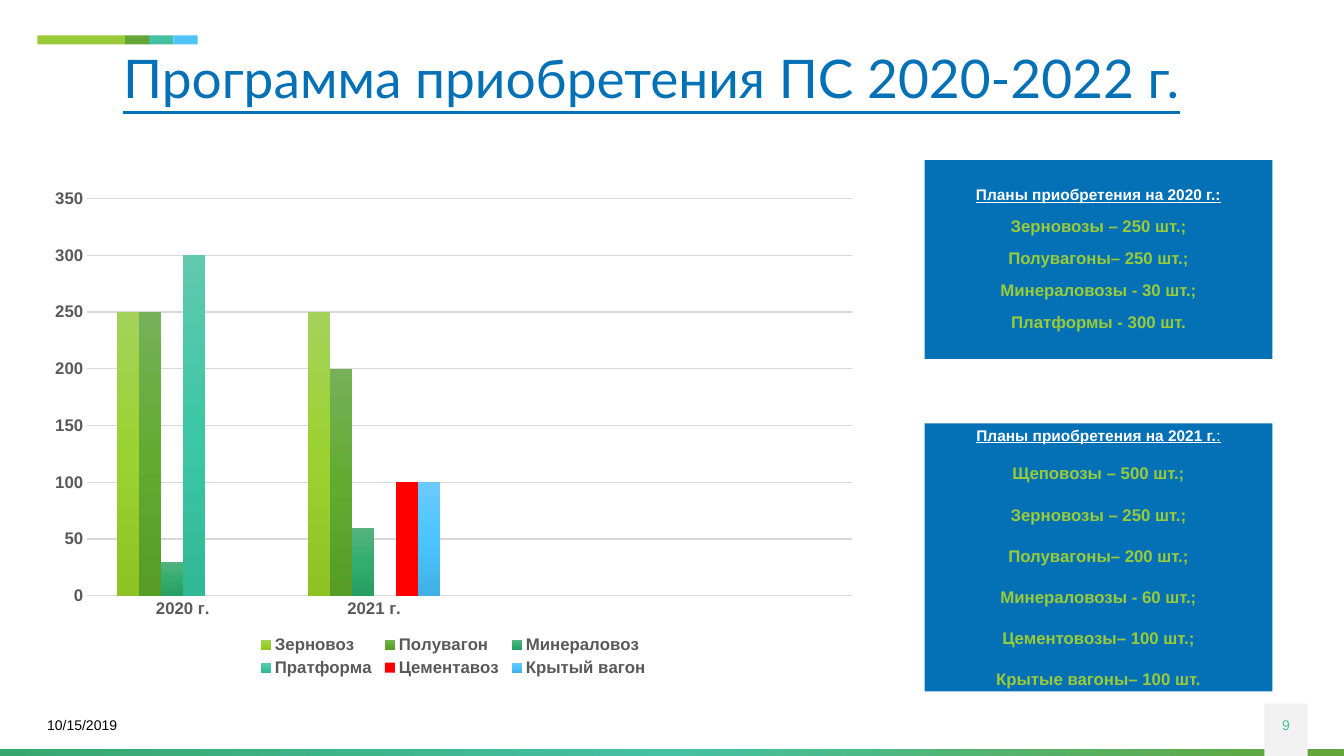
from lxml.etree import SubElement
from pptx import Presentation
from pptx.chart.data import CategoryChartData
from pptx.dml.color import RGBColor
from pptx.enum.chart import XL_CHART_TYPE as CHART, XL_LEGEND_POSITION as LEGEND, XL_TICK_MARK as TICK
from pptx.enum.shapes import MSO_SHAPE as SHAPE
from pptx.enum.text import MSO_ANCHOR as ANCHOR, PP_ALIGN as ALIGN
from pptx.oxml.ns import qn
from pptx.util import Inches, Pt

BLUE, LIME, GREEN, TEAL, SKY = "0471B7", "99CB38", "63A537", "44C1A3", "51C3F9"
GREY, RULE, WHITE = "595959", "D9D9D9", "FFFFFF"

WAGONS = [
    ("Зерновоз", (250, 250), ("A4D25A", "9BD231", "8DC323")),
    ("Полувагон", (250, 200), ("76B158", "62AB31", "569C27")),
    ("Минераловоз", (30, 60), ("58B380", "31AD6F", "279E63")),
    ("Пратформа", (300, None), ("61C8AD", "3EC7A6", "30B897")),
    ("Цементавоз", (None, 100), ("FF0000",)),
    ("Крытый вагон", (None, 100), ("6BCAFC", "4BC5FF", "40B0E5")),
]
PLAN_2020 = ["Зерновозы – 250 шт.;", "Полувагоны– 250 шт.;",
             "Минераловозы - 30 шт.;", "Платформы - 300 шт."]
PLAN_2021 = ["Щеповозы – 500 шт.;", "Зерновозы – 250 шт.;", "Полувагоны– 200 шт.;",
             "Минераловозы - 60 шт.;", "Цементовозы– 100 шт.;", "Крытые вагоны– 100 шт."]


def rgb(color):
    return RGBColor.from_string(color)


def set_font(font, size, color, bold=False, underline=False, name="Arial"):
    font.name, font.size, font.bold, font.underline = name, Pt(size), bold, underline
    font.color.rgb = rgb(color)


def set_fill(fill, sp_pr, colors, angle=0):
    """Fill with one colour, or with evenly spaced gradient stops."""
    if len(colors) == 1:
        fill.solid()
        fill.fore_color.rgb = rgb(colors[0])
        return
    fill.gradient()
    grad = sp_pr.find(qn("a:gradFill"))
    stops = grad.find(qn("a:gsLst"))
    for stop in list(stops):
        stops.remove(stop)
    for i, color in enumerate(colors):
        stop = SubElement(stops, qn("a:gs"), pos=str(100000 * i // (len(colors) - 1)))
        SubElement(stop, qn("a:srgbClr"), val=color)
    grad.find(qn("a:lin")).set("ang", str(angle * 60000))


def add_rect(s, box, *colors):
    sp = s.shapes.add_shape(SHAPE.RECTANGLE, *map(Inches, box))
    sp.shadow.inherit = False
    sp.line.fill.background()
    set_fill(sp.fill, sp._element.spPr, colors)
    return sp


def add_title(s, text):
    title = s.shapes.title
    title.left, title.top, title.width, title.height = map(Inches, (1.22, 0.52, 12.0, 0.58))
    tf = title.text_frame
    tf.margin_left = tf.margin_right = tf.margin_top = tf.margin_bottom = 0
    tf.vertical_anchor = ANCHOR.MIDDLE
    tf.text = text
    p = tf.paragraphs[0]
    p.alignment, p.line_spacing = ALIGN.LEFT, 0.9
    set_font(p.font, 38, BLUE, underline=True, name="Lato")


def add_label(s, box, text, color, align):
    tf = s.shapes.add_textbox(*map(Inches, box)).text_frame
    tf.word_wrap = True
    p = tf.paragraphs[0]
    p.text, p.alignment = text, align
    set_font(p.font, 10, color)


def add_plan(s, box, heading, items, gap, spacing):
    tf = add_rect(s, box, BLUE).text_frame
    tf.word_wrap = True
    tf.vertical_anchor = ANCHOR.MIDDLE
    p = tf.paragraphs[0]
    p.text, p.alignment, p.line_spacing = heading, ALIGN.CENTER, spacing
    set_font(p.font, 11, WHITE, bold=True, underline=True)
    for item in items:
        p = tf.add_paragraph()
        p.text, p.alignment, p.line_spacing = item, ALIGN.CENTER, spacing
        p.space_before = Pt(gap)
        set_font(p.font, 12, LIME, bold=True)
    return tf


def place(parent, x, y, w, h, inner=False):
    """Give a plot area or legend a fixed place, in fractions of the chart."""
    layout = parent.get_or_add_layout() if hasattr(parent, "get_or_add_layout") else None
    if layout is None:
        layout = parent.find(qn("c:layout"))
    if layout is None:
        layout = SubElement(parent, qn("c:layout"))
        parent.insert(0, layout)
    manual = SubElement(layout, qn("c:manualLayout"))
    if inner:
        SubElement(manual, qn("c:layoutTarget"), val="inner")
    for tag in ("xMode", "yMode"):
        SubElement(manual, qn(f"c:{tag}"), val="edge")
    for tag, value in zip("xywh", (x, y, w, h)):
        SubElement(manual, qn(f"c:{tag}"), val=str(value))


def add_wagon_chart(s, box):
    data = CategoryChartData()
    data.categories = ["2020 г.", "2021 г.", "", ""]
    for name, values, _ in WAGONS:
        data.add_series(name, values + (None, None))
    chart = s.shapes.add_chart(CHART.COLUMN_CLUSTERED, *map(Inches, box), data).chart
    chart.has_title = False
    set_font(chart.font, 10, "000000")

    plot = chart.plots[0]
    plot.gap_width, plot.overlap, plot.vary_by_categories = 269, 0, False
    for series, (_, _, colors) in zip(plot.series, WAGONS):
        set_fill(series.format.fill, series._element.spPr, colors, 90)

    for axis in (chart.category_axis, chart.value_axis):
        axis.major_tick_mark = axis.minor_tick_mark = TICK.NONE
        set_font(axis.tick_labels.font, 12, GREY, bold=True)
    line = chart.category_axis.format.line
    line.color.rgb, line.width = rgb(RULE), Pt(1)
    values = chart.value_axis
    values.minimum_scale, values.maximum_scale, values.major_unit = 0, 350, 50
    values.format.line.fill.background()
    grid = values.major_gridlines.format.line
    grid.color.rgb, grid.width = rgb(RULE), Pt(0.75)

    chart.has_legend = True
    legend = chart.legend
    legend.position, legend.include_in_layout = LEGEND.BOTTOM, False
    set_font(legend.font, 12, GREY, bold=True)
    place(chart._chartSpace.chart.plotArea, 0.06, 0.04, 0.92, 0.79, inner=True)
    legend_layout = legend._element.find(qn("c:layout"))
    if legend_layout is None:
        legend_layout = SubElement(legend._element, qn("c:layout"))
        legend._element.find(qn("c:legendPos")).addnext(legend_layout)
    place(legend._element, 0.26, 0.9, 0.48, 0.1)


def main():
    prs = Presentation()
    prs.slide_width, prs.slide_height = Inches(13.33), Inches(7.5)
    s = prs.slides.add_slide(prs.slide_layouts[5])

    add_rect(s, (0, 7.43, 13.33, 0.07), "37A76F", TEAL, GREEN)
    add_rect(s, (12.54, 6.98, 0.43, 0.52), "F2F2F2")
    left = 0.37
    for width, color in ((0.87, LIME), (0.24, GREEN), (0.24, TEAL), (0.24, SKY)):
        add_rect(s, (left, 0.35, width, 0.09), color)
        left += width

    add_title(s, "Программа приобретения ПС 2020-2022 г.")
    add_label(s, (0.37, 7.06, 3, 0.4), "10/15/2019", "000000", ALIGN.LEFT)
    add_label(s, (12.54, 7.06, 0.43, 0.4), "9", TEAL, ALIGN.CENTER)
    add_wagon_chart(s, (0.37, 1.77, 8.25, 4.99))
    add_plan(s, (9.17, 1.59, 3.45, 1.97), "Планы приобретения на 2020 г.:", PLAN_2020, 10, 0.9)
    tf = add_plan(s, (9.17, 4.2, 3.45, 2.66), "Планы приобретения на 2021 г.", PLAN_2021, 15, 1)
    colon = tf.paragraphs[0].add_run()
    colon.text, colon.font.bold = ":", False
    tf.paragraphs[1].space_before = Pt(13.5)

    prs.save("out.pptx")


if __name__ == "__main__":
    main()
